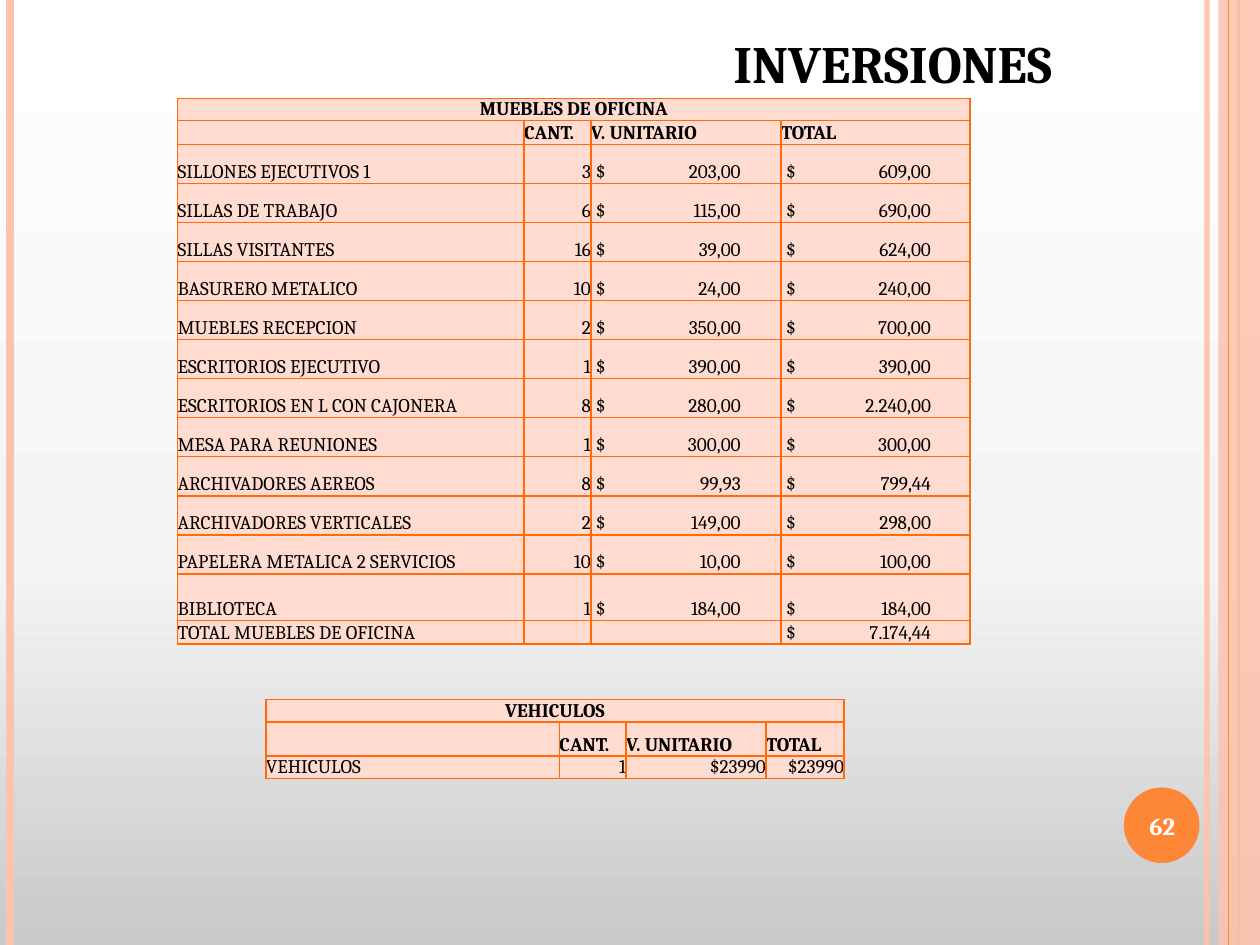
from copy import deepcopy

from lxml.etree import SubElement
from pptx import Presentation
from pptx.dml.color import RGBColor
from pptx.enum.shapes import MSO_CONNECTOR, MSO_SHAPE
from pptx.enum.text import MSO_ANCHOR, PP_ALIGN
from pptx.oxml.ns import qn
from pptx.util import Inches, Pt

FONT = "Cambria"
ORANGE, PEACH, EDGE, PALE = "FE8637", "FEC3AE", "FF6B0A", "FFDBD0"

OFFICE = [
    ("SILLONES EJECUTIVOS 1", "3", "203,00", "609,00"),
    ("SILLAS DE TRABAJO", "6", "115,00", "690,00"),
    ("SILLAS VISITANTES", "16", "39,00", "624,00"),
    ("BASURERO METALICO", "10", "24,00", "240,00"),
    ("MUEBLES RECEPCION", "2", "350,00", "700,00"),
    ("ESCRITORIOS EJECUTIVO", "1", "390,00", "390,00"),
    ("ESCRITORIOS EN L CON CAJONERA", "8", "280,00", "2.240,00"),
    ("MESA PARA REUNIONES", "1", "300,00", "300,00"),
    ("ARCHIVADORES AEREOS", "8", "99,93", "799,44"),
    ("ARCHIVADORES VERTICALES", "2", "149,00", "298,00"),
    ("PAPELERA METALICA 2 SERVICIOS", "10", "10,00", "100,00"),
    ("BIBLIOTECA", "1", "184,00", "184,00"),
    ("TOTAL MUEBLES DE OFICINA", "", "", "7.174,44"),
]
CARS = [("VEHICULOS", "1", "$23990", "$23990")]
HEADS = ("", "CANT.", "V. UNITARIO", "TOTAL")


def rgb(code):
    return RGBColor.from_string(code)


def fade(fill, percent):
    """Make a solid fill partly transparent."""
    color = fill._xPr.find(qn("a:solidFill"))[0]
    SubElement(color, qn("a:alpha"), val=str(percent * 1000))


def write(par, text, size, color="000000", bold=True, align=PP_ALIGN.LEFT):
    par.alignment = align
    run = par.add_run()
    run.text = text
    font = run.font
    font.name, font.size, font.bold = FONT, Pt(size), bold
    font.color.rgb = rgb(color)
    return run


def paint_back(slide):
    fill = slide.background.fill
    fill.gradient()
    fill.gradient_angle = 90
    stops = fill.gradient_stops
    last = stops[1]._gs
    last.addprevious(deepcopy(last))
    marks = [(0, "C9C9C9"), (0.4, "F4F4F4"), (1, "FFFFFF")]
    for stop, (place, code) in zip(fill.gradient_stops, marks):
        stop.position = place
        stop.color.rgb = rgb(code)


def add_stripe(slide, x, color, width, alpha=100):
    """Draw a vertical line over the full slide height."""
    line = slide.shapes.add_connector(
        MSO_CONNECTOR.STRAIGHT, Inches(x), 0, Inches(x), Inches(7.5))
    line.line.color.rgb = rgb(color)
    line.line.width = Pt(width)
    if alpha < 100:
        fade(line.line.fill, alpha)
    SubElement(line._element.spPr, qn("a:effectLst"))


def add_plain(slide, kind, box, color):
    shape = slide.shapes.add_shape(kind, *map(Inches, box))
    shape.shadow.inherit = False
    shape.fill.solid()
    shape.fill.fore_color.rgb = rgb(color)
    shape.line.fill.background()
    return shape


def style_cell(cell):
    cell.margin_left = cell.margin_right = 0
    cell.margin_top = cell.margin_bottom = 0
    cell.vertical_anchor = MSO_ANCHOR.BOTTOM
    props = cell._tc.get_or_add_tcPr()
    for side in ("lnL", "lnR", "lnT", "lnB"):
        edge = SubElement(props, qn(f"a:{side}"), w=str(Pt(1)))
        fill = SubElement(edge, qn("a:solidFill"))
        SubElement(fill, qn("a:srgbClr"), val=EDGE)
    cell.fill.solid()
    cell.fill.fore_color.rgb = rgb(PALE)


def fill_cell(cell, text, bold, align):
    par = cell.text_frame.paragraphs[0]
    if text:
        write(par, text, 11, bold=bold, align=align)
    else:
        SubElement(par._p, qn("a:endParaRPr"), sz="1100")


def fill_money(cell, text):
    """Put the dollar sign left and the amount at a right tab stop."""
    fill_cell(cell, f"$\t{text}", False, PP_ALIGN.LEFT)
    cell.margin_left = Inches(0.04)
    props = cell.text_frame.paragraphs[0]._p.get_or_add_pPr()
    tabs = SubElement(props, qn("a:tabLst"))
    SubElement(tabs, qn("a:tab"), pos=str(Inches(1.15)), algn="r")


def add_grid(slide, spot, cols, rows, title, items, money):
    table = slide.shapes.add_table(
        len(rows), len(cols), *map(Inches, (*spot, sum(cols), sum(rows)))).table
    table.first_row = table.horz_banding = False
    for col, width in zip(table.columns, cols):
        col.width = Inches(width)
    for row, height in zip(table.rows, rows):
        row.height = Inches(height)
    for cell in table.iter_cells():
        style_cell(cell)

    # Title and column heads
    table.cell(0, 0).merge(table.cell(0, len(cols) - 1))
    fill_cell(table.cell(0, 0), title, True, PP_ALIGN.CENTER)
    for c, head in enumerate(HEADS):
        fill_cell(table.cell(1, c), head, True, PP_ALIGN.LEFT)

    # Items
    for r, item in enumerate(items, 2):
        for c, text in enumerate(item):
            cell = table.cell(r, c)
            if money and c > 1 and text:
                fill_money(cell, text)
            else:
                align = PP_ALIGN.RIGHT if c else PP_ALIGN.LEFT
                fill_cell(cell, text, False, align)


def set_title(slide, text):
    title = slide.shapes.title
    title.left, title.top = Inches(0.47), Inches(0.16)
    title.width, title.height = Inches(8.17), Inches(0.64)
    frame = title.text_frame
    frame.margin_left = Inches(2.63)
    frame.vertical_anchor = MSO_ANCHOR.BOTTOM
    run = write(frame.paragraphs[0], text, 30, align=PP_ALIGN.CENTER)
    run.font._element.set("cap", "small")


def add_number(slide, text):
    box = slide.shapes.add_textbox(*map(Inches, (8.89, 6.27, 0.67, 0.57)))
    frame = box.text_frame
    frame.word_wrap = True
    frame.vertical_anchor = MSO_ANCHOR.MIDDLE
    write(frame.paragraphs[0], text, 14, "FFFFFF", align=PP_ALIGN.CENTER)


def main():
    deck = Presentation()
    deck.slide_width, deck.slide_height = Inches(10), Inches(7.5)
    slide = deck.slides.add_slide(deck.slide_layouts[5])

    # Backdrop
    paint_back(slide)
    add_stripe(slide, 9.58, PEACH, 3, 93)
    add_stripe(slide, 0.08, PEACH, 4.5)
    add_stripe(slide, 9.83, ORANGE, 1.5)
    band = add_plain(slide, MSO_SHAPE.RECTANGLE, (9.67, 0, 0.33, 7.5), PEACH)
    fade(band.fill, 87)
    add_stripe(slide, 9.75, ORANGE, 0.75)
    add_plain(slide, MSO_SHAPE.OVAL, (8.92, 6.25, 0.6, 0.6), ORANGE)

    # Content
    add_grid(slide, (1.41, 0.78), (2.75, 0.53, 1.51, 1.5),
             [0.15] * 2 + [0.31] * 11 + [0.37, 0.15],
             "MUEBLES DE OFICINA", OFFICE, True)
    add_grid(slide, (2.11, 5.55), (2.33, 0.53, 1.11, 0.62),
             [0.18, 0.27, 0.18], "VEHICULOS", CARS, False)
    set_title(slide, "INVERSIONES")
    add_number(slide, "62")
    deck.save("out.pptx")


if __name__ == "__main__":
    main()
